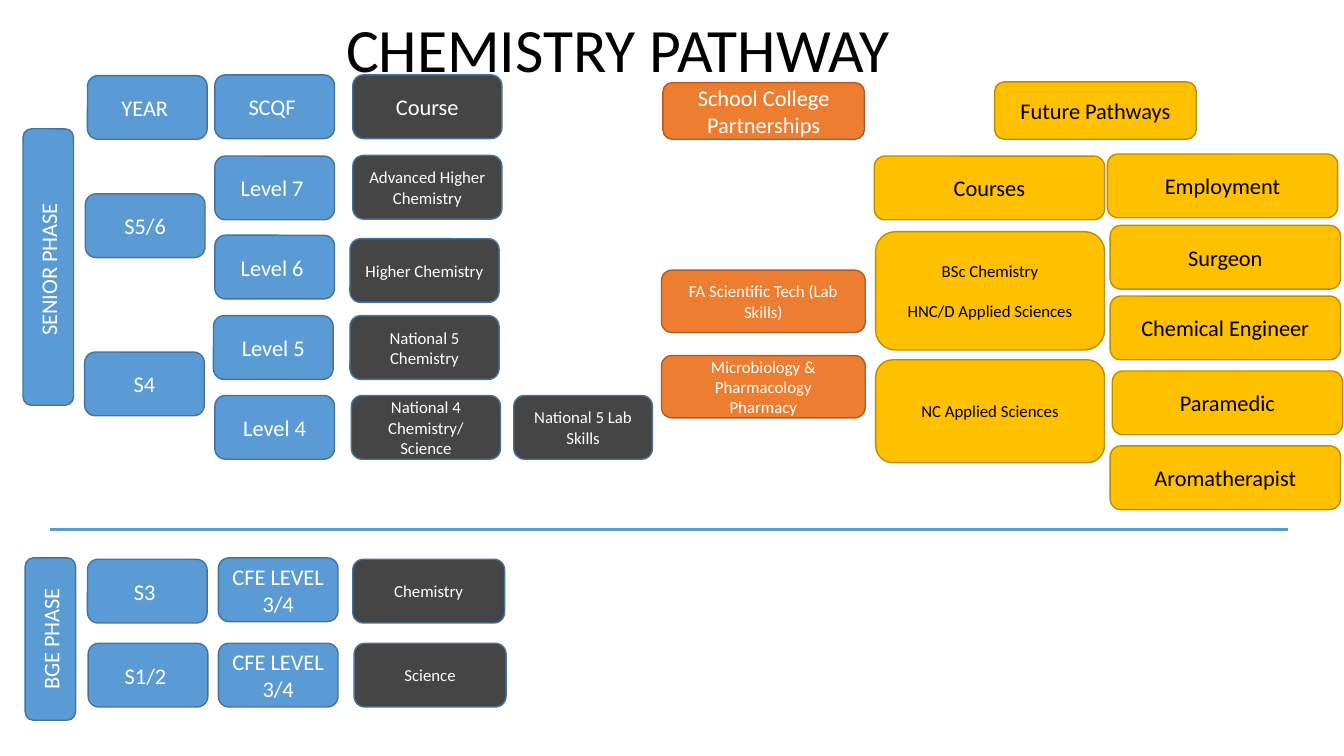
import pptx
import pptx.dml.color
import pptx.enum.shapes
import pptx.enum.text
import pptx.oxml.ns
import pptx.util
from lxml import etree

Pt = pptx.util.Pt
RGBColor = pptx.dml.color.RGBColor
CENTER = pptx.enum.text.PP_ALIGN.CENTER
MIDDLE = pptx.enum.text.MSO_ANCHOR.MIDDLE

WHITE = RGBColor(0xFF, 0xFF, 0xFF)
BLACK = RGBColor(0x00, 0x00, 0x00)
BLUE = RGBColor(0x5B, 0x9B, 0xD5)
BLUE_EDGE = RGBColor(0x43, 0x73, 0x9E)
GREY = RGBColor(0x45, 0x45, 0x45)
ORANGE = RGBColor(0xED, 0x7D, 0x31)
ORANGE_EDGE = RGBColor(0xAF, 0x5C, 0x24)
GOLD = RGBColor(0xFF, 0xC0, 0x00)
GOLD_EDGE = RGBColor(0xBD, 0x8E, 0x00)

# Fill, edge and text colour of each group of boxes
STAGE = (BLUE, BLUE_EDGE, WHITE)
COURSE = (GREY, BLUE_EDGE, WHITE)
COLLEGE = (ORANGE, ORANGE_EDGE, WHITE)
FUTURE = (GOLD, GOLD_EDGE, BLACK)

BOX_HEIGHT = 45.5
LARGE, SMALL = 16, 12


class PathwaySlide:
    """Holds the shared style and the slide being filled."""

    font_name = "Calibri"
    frame_format = {"word_wrap": True, "vertical_anchor": MIDDLE}

    def __init__(self, presentation):
        self.slide = presentation.slides.add_slide(presentation.slide_layouts[6])

    def label(self, frame, text, size, color, line_spacing=1.0, gap=0):
        for name, value in self.frame_format.items():
            setattr(frame, name, value)
        font_format = {"name": self.font_name, "size": Pt(size)}
        for index, line in enumerate(text.split("\n")):
            paragraph = frame.paragraphs[0] if index == 0 else frame.add_paragraph()
            paragraph.alignment = CENTER
            paragraph.line_spacing = line_spacing
            if index and gap:
                paragraph.space_before = Pt(gap)
            run = paragraph.add_run()
            run.text = line
            for name, value in font_format.items():
                setattr(run.font, name, value)
            run.font.color.rgb = color

    def title(self, text, left, top, width, height):
        box = self.slide.shapes.add_textbox(Pt(left), Pt(top), Pt(width), Pt(height))
        self.label(box.text_frame, text, 44, BLACK, line_spacing=0.9)

    def box(self, style, text, left, top, width, height=BOX_HEIGHT,
            size=LARGE, gap=0, upward=False):
        fill, edge, text_color = style
        shape = self.slide.shapes.add_shape(
            pptx.enum.shapes.MSO_SHAPE.ROUNDED_RECTANGLE,
            Pt(left), Pt(top), Pt(width), Pt(height))
        shape.shadow.inherit = False
        shape.fill.solid()
        shape.fill.fore_color.rgb = fill
        shape.line.color.rgb = edge
        shape.line.width = Pt(1)
        self.label(shape.text_frame, text, size, text_color, gap=gap)
        if upward:
            shape.element.txBody.bodyPr.set("vert", "vert270")

    def column(self, style, width, entries, **options):
        for text, left, top in entries:
            self.box(style, text, left, top, width, **options)

    def divider(self, left, right, top):
        line = self.slide.shapes.add_connector(
            pptx.enum.shapes.MSO_CONNECTOR.STRAIGHT,
            Pt(left), Pt(top), Pt(right), Pt(top))
        line.line.color.rgb = BLUE
        line.line.width = Pt(2.25)
        etree.SubElement(line.element.spPr, pptx.oxml.ns.qn("a:effectLst"))


def main():
    presentation = pptx.Presentation()
    presentation.slide_width = Pt(960)
    presentation.slide_height = Pt(540)
    pathway = PathwaySlide(presentation)

    pathway.title("CHEMISTRY PATHWAY", 156.5, 8.5, 570, 57.5)

    # Phases, read upwards
    pathway.box(STAGE, "SENIOR PHASE ", 16.5, 92, 36, 197.5, upward=True)
    pathway.box(STAGE, "BGE PHASE", 18, 398.5, 36, 116, upward=True)

    # School years and qualification levels
    pathway.column(STAGE, 85.5, [
        ("YEAR ", 62.5, 54),
        ("S5/6", 61, 138.5),
        ("S4", 60.5, 251.5),
        ("S3 ", 62.5, 399.5),
        ("S1/2 ", 63, 459.5),
        ("SCQF ", 153.5, 53.5),
        ("Level 7 ", 153.5, 111.5),
        ("Level 6 ", 153.5, 168),
        ("Level 5", 152.5, 225.5),
        ("Level 4", 153.5, 282.5),
        ("CFE LEVEL 3/4", 156, 398.5),
        ("CFE LEVEL 3/4", 156, 459.5),
    ])

    # School courses
    pathway.box(COURSE, "Course", 252, 53.5, 106.5)
    pathway.column(COURSE, 106.5, [
        ("Advanced Higher Chemistry", 252, 111),
        ("Higher Chemistry", 250, 170.5),
        ("National 5 Chemistry", 250, 225.5),
        ("National 4 Chemistry/\nScience", 251, 282.5),
    ], size=SMALL)
    pathway.box(COURSE, "National 5 Lab Skills", 367, 282.5, 99, size=SMALL)
    pathway.column(COURSE, 108.5, [
        ("Chemistry", 252, 399.5),
        ("Science", 253, 459.5),
    ], size=SMALL)

    # College partnerships
    pathway.box(COLLEGE, "School College Partnerships", 473.5, 59, 144, 40.5)
    pathway.column(COLLEGE, 145.5, [
        ("FA Scientific Tech (Lab Skills)", 472.5, 193),
        ("Microbiology & Pharmacology\nPharmacy", 472.5, 254),
    ], height=44.5, size=SMALL)

    # Future courses and employment
    pathway.box(FUTURE, "Future Pathways", 710.5, 58.5, 144, 41)
    pathway.box(FUTURE, "BSc Chemistry\nHNC/D Applied Sciences",
                625.5, 165.5, 163.5, 84.5, size=SMALL, gap=14.6)
    pathway.box(FUTURE, "NC Applied Sciences", 625.5, 257, 163.5, 73.5, size=SMALL)
    pathway.column(FUTURE, 164.5, [
        ("Courses", 624.5, 111.5),
        ("Employment", 791, 110),
        ("Surgeon", 793, 161),
        ("Chemical Engineer", 793, 211.5),
        ("Paramedic", 794.5, 265),
        ("Aromatherapist", 793, 318.5),
    ])

    # Line between the two phases
    pathway.divider(36, 920, 378.5)

    presentation.save("out.pptx")


if __name__ == "__main__":
    main()
